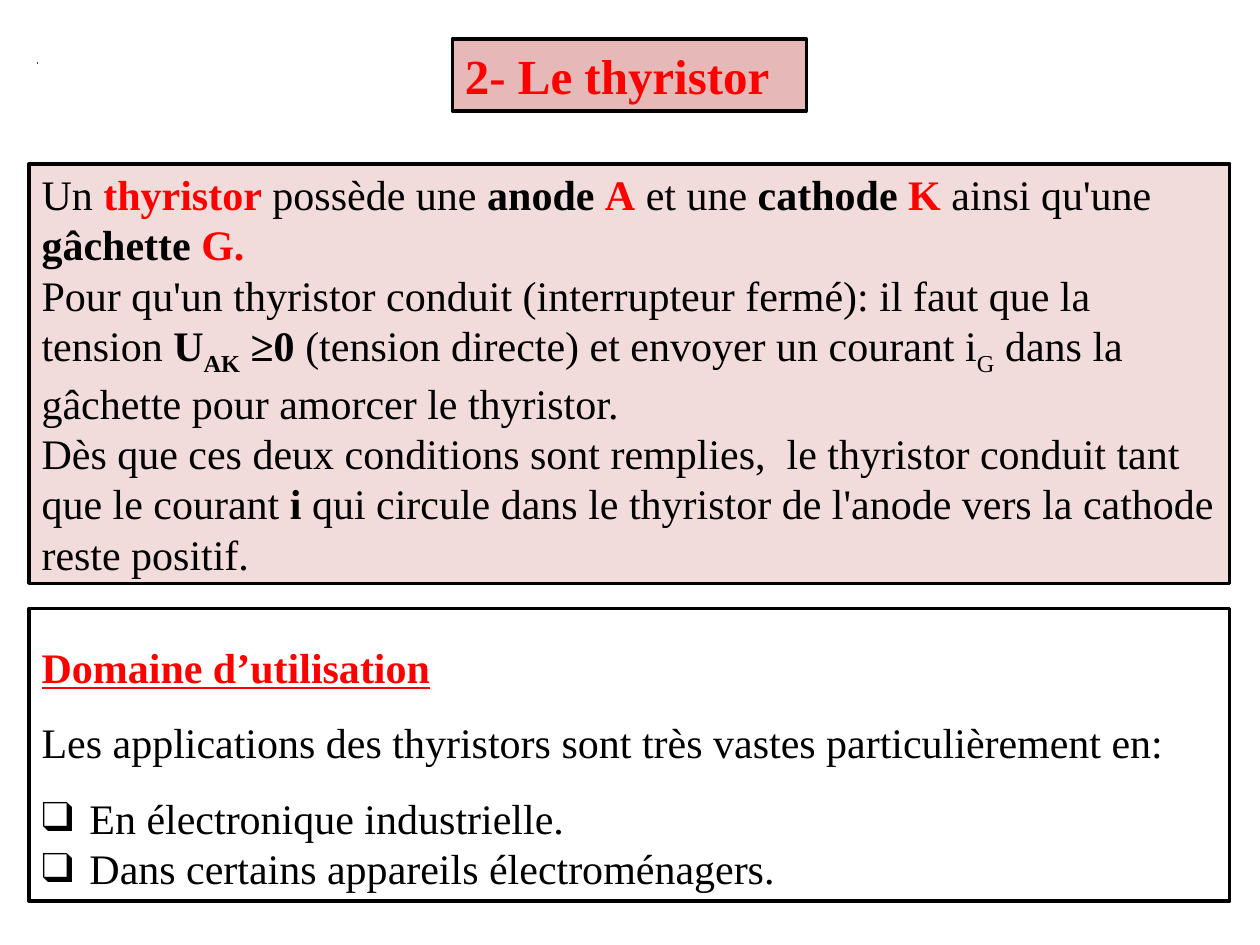
import pptx
import pptx.dml.color
import pptx.enum.shapes
import pptx.enum.text
import pptx.oxml.ns
import pptx.util
import lxml.etree

COLORS = {"black": "000000", "red": "FF0000", "rose": "E6B9B8",
          "pale": "F2DCDB", "white": "FFFFFF", "blue": "4F81BD"}
FONT = "Times New Roman"
BULLET = "❑"
BULLET_INDENT = pptx.util.Inches(0.38)
MARGIN, PANEL_WIDTH = 0.23, 9.53

# Run styles: b = bold, r = red, u = underlined, s = subscript
DEFINITION = [
    [("Un ", ""), ("thyristor", "br"), (" possède une ", ""), ("anode ", "b"),
     ("A", "br"), (" et une ", ""), ("cathode ", "b"), ("K", "br"),
     (" ainsi qu'une ", ""), ("gâchette ", "b"), ("G.", "br")],
    [("Pour qu'un thyristor conduit (interrupteur fermé): il faut que la tension ", ""),
     ("U", "b"), ("AK", "bs"), (" ≥0 ", "b"),
     ("(tension directe) et envoyer un courant i", ""), ("G", "s"),
     (" dans la gâchette pour amorcer le thyristor.", "")],
    [("Dès que ces deux conditions sont remplies,  le thyristor conduit tant que le courant ", ""),
     ("i", "b"),
     (" qui circule dans le thyristor de l'anode vers la cathode reste positif.", "")],
]
USES_INTRO = [
    [("Domaine d’utilisation", "bru")],
    [("Les applications des thyristors sont très vastes particulièrement en:", "")],
]
USES = ["En électronique industrielle.", "Dans certains appareils électroménagers."]


def rgb(name):
    return pptx.dml.color.RGBColor.from_string(COLORS[name])


def paint(shape, fill, weight):
    shape.fill.solid()
    shape.fill.fore_color.rgb = rgb(fill)
    shape.line.color.rgb = rgb("black")
    shape.line.width = pptx.util.Pt(weight)


def place_panel(panel, box, fill):
    """Move a placeholder to its box (inches) and frame it."""
    panel.left, panel.top, panel.width, panel.height = map(pptx.util.Inches, box)
    paint(panel, fill, 2)
    frame = panel.text_frame
    frame.word_wrap = True
    frame.auto_size = pptx.enum.text.MSO_AUTO_SIZE.NONE
    frame.vertical_anchor = pptx.enum.text.MSO_ANCHOR.MIDDLE
    return frame


def set_bullet(paragraph, bullet):
    props = paragraph._p.get_or_add_pPr()
    indent = BULLET_INDENT if bullet else 0
    props.set("marL", str(indent))
    props.set("indent", str(-indent))
    qn = pptx.oxml.ns.qn
    if bullet:
        lxml.etree.SubElement(props, qn("a:buFont"), typeface=FONT)
        lxml.etree.SubElement(props, qn("a:buChar"), char=BULLET)
    else:
        lxml.etree.SubElement(props, qn("a:buNone"))


def write_paragraph(paragraph, runs, size=24, spacing=1.0, bullet=False):
    paragraph.alignment = pptx.enum.text.PP_ALIGN.LEFT
    paragraph.line_spacing = spacing
    paragraph.space_before = pptx.util.Pt(0)
    set_bullet(paragraph, bullet)
    paragraph.font.name = FONT
    paragraph.font.size = pptx.util.Pt(size)
    for text, style in runs:
        run = paragraph.add_run()
        run.text = text
        run.font.bold = "b" in style
        run.font.underline = "u" in style
        run.font.color.rgb = rgb("red" if "r" in style else "black")
        if "s" in style:
            run.font._element.set("baseline", "-25000")


def write_paragraphs(frame, entries):
    for index, (runs, options) in enumerate(entries):
        paragraph = frame.add_paragraph() if index else frame.paragraphs[0]
        write_paragraph(paragraph, runs, **options)


def add_heading(heading, box):
    frame = place_panel(heading, box, "rose")
    write_paragraphs(frame, [([("2- Le thyristor", "br")], {"size": 28})])


def add_definition(definition, box):
    frame = place_panel(definition, box, "pale")
    write_paragraphs(frame, [(runs, {}) for runs in DEFINITION])


def add_uses(uses, box):
    frame = place_panel(uses, box, "white")
    entries = [(runs, {"spacing": 1.5}) for runs in USES_INTRO]
    for spacing, use in zip((1.5, 1.0), USES):
        entries.append(([(use, "")], {"spacing": spacing, "bullet": True}))
    write_paragraphs(frame, entries)


def add_dot(slide, left, top):
    dot = slide.shapes.add_shape(
        pptx.enum.shapes.MSO_SHAPE.RECTANGLE,
        pptx.util.Inches(left), pptx.util.Inches(top), 0, 0)
    dot.shadow.inherit = False
    paint(dot, "blue", 0.75)


def main():
    deck = pptx.Presentation()
    deck.slide_width = pptx.util.Inches(10)
    deck.slide_height = pptx.util.Inches(7.5)
    slide = deck.slides.add_slide(deck.slide_layouts.get_by_name("Two Content"))
    heading, definition, uses = list(slide.placeholders)[:3]

    add_dot(slide, 0.3, 0.5)
    add_heading(heading, (3.59, 0.31, 2.81, 0.57))
    add_definition(definition, (MARGIN, 1.3, PANEL_WIDTH, 3.33))
    add_uses(uses, (MARGIN, 4.83, PANEL_WIDTH, 2.32))
    deck.save("out.pptx")


if __name__ == "__main__":
    main()
